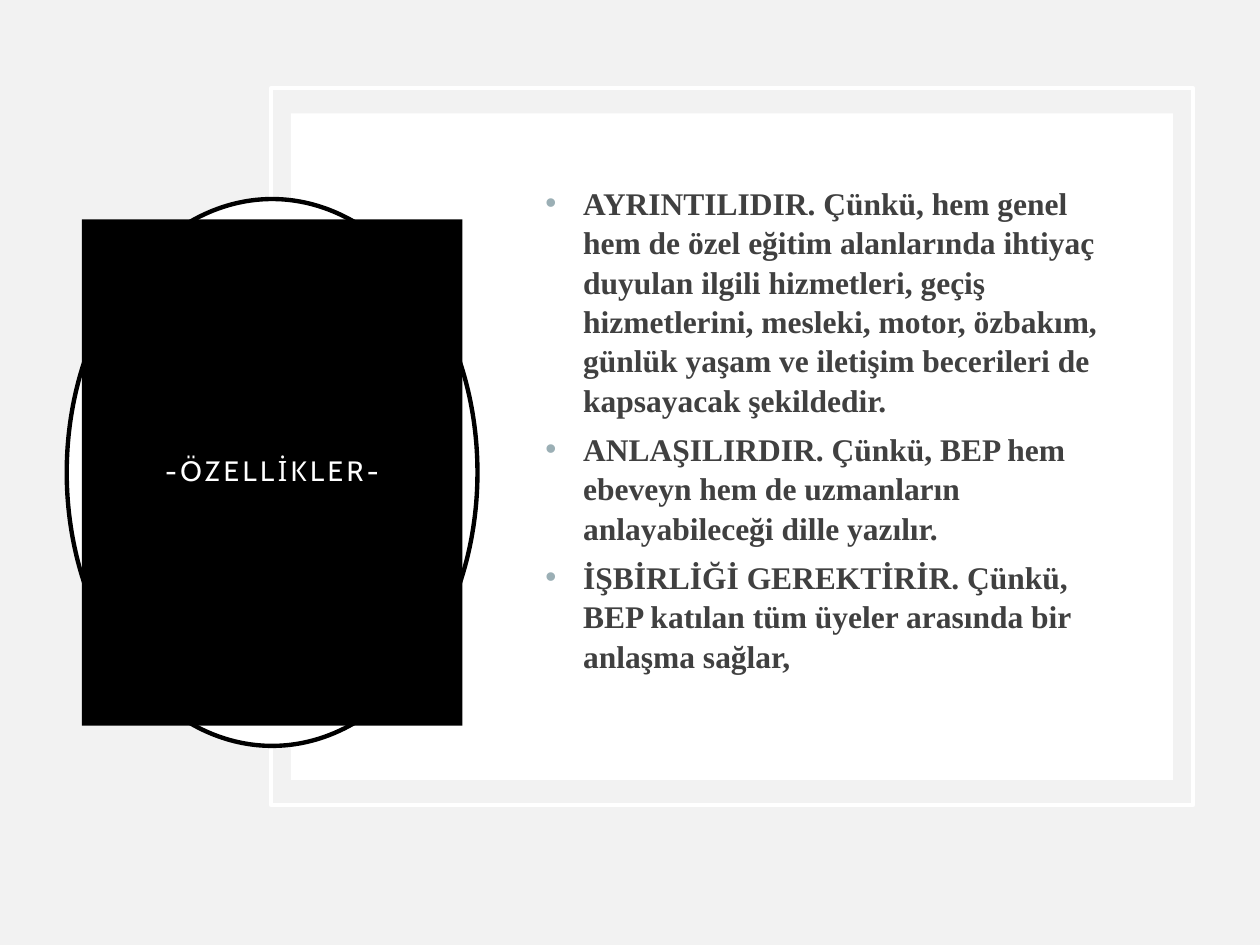
import pptx
import pptx.dml.color
import pptx.enum.shapes
import pptx.enum.text
import pptx.oxml
import pptx.oxml.ns
import pptx.util

Inches, Pt = pptx.util.Inches, pptx.util.Pt
RGBColor = pptx.dml.color.RGBColor
MSO_SHAPE = pptx.enum.shapes.MSO_SHAPE
MSO_ANCHOR = pptx.enum.text.MSO_ANCHOR

BACKGROUND = RGBColor(0xF2, 0xF2, 0xF2)
WHITE = RGBColor(0xFF, 0xFF, 0xFF)
BLACK = RGBColor(0, 0, 0)
BODY_GREY = RGBColor(0x40, 0x40, 0x40)
BULLET_COLOR = "9BAFB5"

TITLE = "-ÖZELLİKLER-"
FEATURES = [
    "AYRINTILIDIR. Çünkü, hem genel hem de özel eğitim alanlarında ihtiyaç "
    "duyulan ilgili hizmetleri, geçiş hizmetlerini, mesleki, motor, özbakım, "
    "günlük yaşam ve iletişim becerileri de kapsayacak şekildedir.",
    "ANLAŞILIRDIR. Çünkü, BEP hem ebeveyn hem de uzmanların anlayabileceği "
    "dille yazılır.",
    "İŞBİRLİĞİ GEREKTİRİR. Çünkü, BEP katılan tüm üyeler arasında bir anlaşma "
    "sağlar,",
]


def add_panel(slide, kind, box, fill=None, line=None):
    """Add a plain shape; box is left, top, width, height in inches."""
    sp = slide.shapes.add_shape(kind, *map(Inches, box))
    sp.shadow.inherit = False
    if fill is None:
        sp.fill.background()
    else:
        sp.fill.solid()
        sp.fill.fore_color.rgb = fill
    if line is None:
        sp.line.fill.background()
    else:
        sp.line.color.rgb = line
        sp.line.width = Pt(2.5)
    return sp


def style_run(r, font, size, color, bold=False):
    r.font.name = font
    r.font.size = Pt(size)
    r.font.color.rgb = color
    r.font.bold = bold


def add_bullet(p, indent):
    pPr = p._p.get_or_add_pPr()
    pPr.set("marL", str(Inches(indent)))
    pPr.set("indent", str(-Inches(indent)))
    ns = pptx.oxml.ns.nsdecls("a")
    for xml in (
        f'<a:buClr {ns}><a:srgbClr val="{BULLET_COLOR}"/></a:buClr>',
        f'<a:buFont {ns} typeface="Arial"/>',
        f'<a:buChar {ns} char="•"/>',
    ):
        pPr.append(pptx.oxml.parse_xml(xml))


def add_frame(slide, box):
    """White card inside a white outline."""
    left, top, width, height = box
    dx, dy = 0.16, 0.2
    add_panel(slide, MSO_SHAPE.RECTANGLE, box, line=WHITE)
    card = (left + dx, top + dy, width - 2 * dx, height - 2 * dy)
    add_panel(slide, MSO_SHAPE.RECTANGLE, card, fill=WHITE)


def add_title(slide, box):
    """Black title block over an outlined ellipse."""
    left, top, width, height = box
    dx, dy = 0.12, 0.16
    add_panel(slide, MSO_SHAPE.OVAL, box, fill=WHITE, line=BLACK)
    block = (left + dx, top + dy, width - 2 * dx, height - 2 * dy)
    sp = add_panel(slide, MSO_SHAPE.RECTANGLE, block, fill=BLACK)
    tf = sp.text_frame
    tf.word_wrap = True
    tf.vertical_anchor = MSO_ANCHOR.MIDDLE
    tf.margin_left = tf.margin_right = Inches(0.2)
    tf.margin_top = tf.margin_bottom = Inches(0.2)
    tf.text = TITLE
    p = tf.paragraphs[0]
    p.alignment = pptx.enum.text.PP_ALIGN.CENTER
    p.line_spacing = 0.9
    r = p.runs[0]
    style_run(r, "Cabin", 16, WHITE)
    r.font._element.set("spc", "200")


def add_features(slide, box):
    """Bulleted list of features."""
    tf = slide.shapes.add_textbox(*map(Inches, box)).text_frame
    tf.word_wrap = True
    tf.vertical_anchor = MSO_ANCHOR.TOP
    tf.text = "\n".join(FEATURES)
    for p in tf.paragraphs:
        p.space_before = Pt(5.8)
        p.line_spacing = 1.04
        add_bullet(p, 0.3)
        style_run(p.runs[0], "Times New Roman", 18, BODY_GREY, bold=True)


def main():
    prs = pptx.Presentation()
    prs.slide_width, prs.slide_height = Inches(10), Inches(7.5)
    slide = prs.slides.add_slide(prs.slide_layouts[6])
    slide.background.fill.solid()
    slide.background.fill.fore_color.rgb = BACKGROUND

    add_frame(slide, (2.15, 0.7, 7.32, 5.69))
    add_title(slide, (0.53, 1.58, 3.26, 4.34))
    add_features(slide, (4.23, 1.4, 4.69, 4.28))
    prs.save("out.pptx")


if __name__ == "__main__":
    main()
